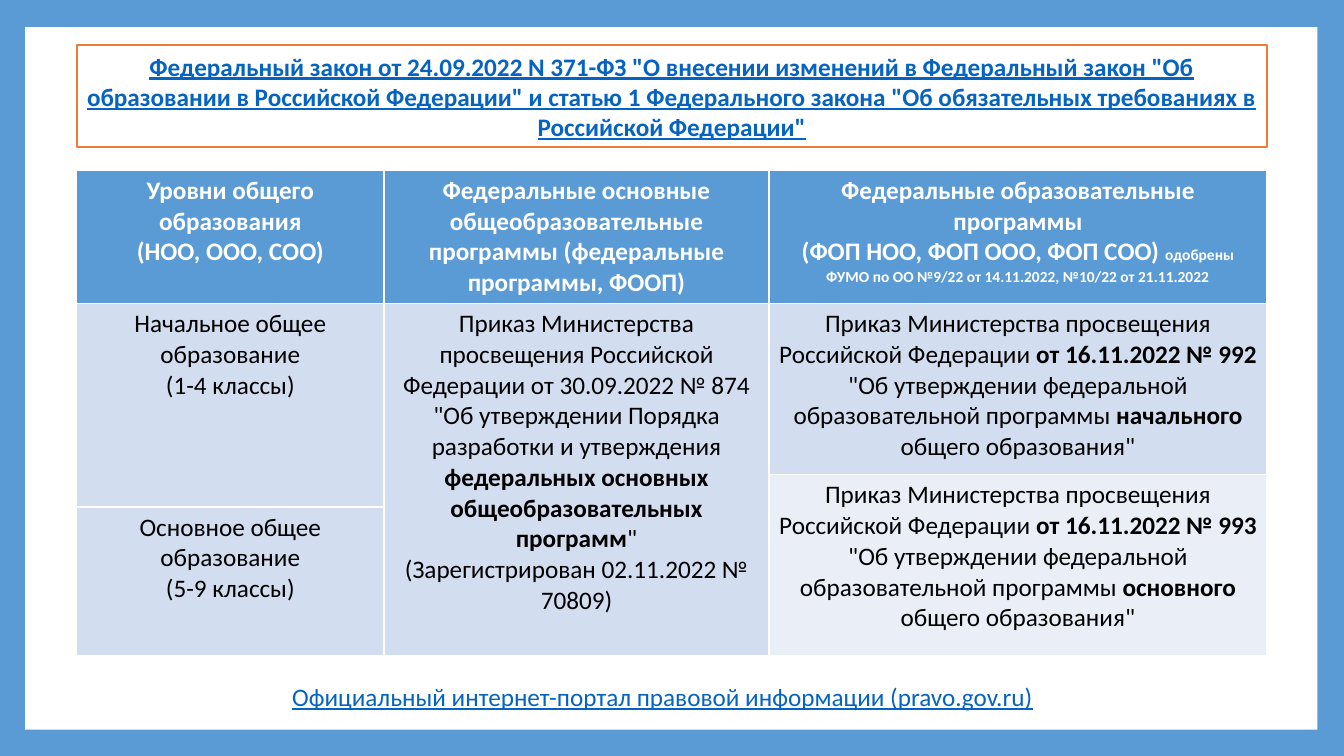
from pptx import Presentation
from pptx.dml.color import RGBColor
from pptx.enum import shapes, text
from pptx.util import Pt

HUES = {"blue": "5B9BD5", "white": "FFFFFF", "pale": "D2DEEF", "light": "EAEFF7",
        "link": "0563C1", "edge": "ED7D31", "black": "000000"}


def paint(fill, hue):
    fill.solid()
    fill.fore_color.rgb = RGBColor.from_string(HUES[hue])


def write(frame, paras, hue, align=text.PP_ALIGN.CENTER, line=False):
    """Fill a frame; each paragraph is a list of (words, bold, size) runs."""
    frame.word_wrap = True
    for i, runs in enumerate(paras):
        para = frame.paragraphs[0] if i == 0 else frame.add_paragraph()
        para.alignment = align
        for words, bold, size in runs:
            run = para.add_run()
            run.text = words
            font = run.font
            font.name, font.size, font.bold = "Calibri", Pt(size), bold
            font.underline = line
            font.color.rgb = RGBColor.from_string(HUES[hue])


deck = Presentation()
deck.slide_width, deck.slide_height = Pt(960), Pt(540)
slide = deck.slides.add_slide(deck.slide_layouts[5])
paint(slide.background.fill, "blue")

# White panel, sent behind the title
panel = slide.shapes.add_shape(shapes.MSO_SHAPE.RECTANGLE,
                               Pt(18), Pt(19.4), Pt(923), Pt(501.9))
panel.shadow.inherit = False
paint(panel.fill, "white")
panel.line.fill.background()
slide.shapes._spTree.insert(2, panel._element)

# Title
left, width = 54.7, 850.3
title = slide.shapes.title
title.left, title.top, title.width, title.height = Pt(left), Pt(32.4), Pt(width), Pt(72.7)
paint(title.fill, "white")
paint(title.line.fill, "edge")
title.line.width = Pt(1.5)
law = ('Федеральный закон от 24.09.2022 N 371-ФЗ "О внесении изменений в Федеральный '
       'закон "Об образовании в Российской Федерации" и статью 1 Федерального закона '
       '"Об обязательных требованиях в Российской Федерации"')
write(title.text_frame, [[(law, True, 18)]], "link", line=True)
title.text_frame.auto_size = text.MSO_AUTO_SIZE.NONE
title.text_frame.vertical_anchor = text.MSO_ANCHOR.MIDDLE

# Table
cols = [219.6, 275, 355.7]
rows = [87.1, 122.4, 23, 105.9]
table = slide.shapes.add_table(len(rows), len(cols), Pt(left), Pt(121.7),
                               Pt(width), Pt(sum(rows))).table
table.horz_banding = False
for col, wide in zip(table.columns, cols):
    col.width = Pt(wide)
for row, high in zip(table.rows, rows):
    row.height = Pt(high)

heads = [
    [[("Уровни общего образования", True, 18)], [("(НОО, ООО, СОО)", True, 18)]],
    [[("Федеральные основные общеобразовательные программы "
       "(федеральные программы, ФООП)", True, 18)]],
    [[("Федеральные образовательные программы", True, 18)],
     [("(ФОП НОО, ФОП ООО, ФОП СОО) ", True, 18),
      ("одобрены ФУМО по ОО №9/22 от 14.11.2022, №10/22 от 21.11.2022", True, 11)]],
]
for j, paras in enumerate(heads):
    cell = table.cell(0, j)
    paint(cell.fill, "blue")
    write(cell.text_frame, paras, "white")

# Body cells: first row, last row, column, fill, paragraphs
body = [
    (1, 2, 0, "pale", [[("Начальное общее образование", False, 18)],
                       [("(1-4 классы)", False, 18)]]),
    (3, 3, 0, "pale", [[("Основное общее образование", False, 18)],
                       [("(5-9 классы)", False, 18)]]),
    (1, 3, 1, "pale", [
        [("Приказ Министерства просвещения Российской Федерации от 30.09.2022 № 874 "
          '"Об утверждении Порядка разработки и утверждения ', False, 18),
         ("федеральных основных общеобразовательных программ", True, 18),
         ('"', False, 18)],
        [("(Зарегистрирован 02.11.2022 № 70809)", False, 18)]]),
]
for top, end, hue, code, level in [(1, 1, "pale", 992, "начального"),
                                   (2, 3, "light", 993, "основного")]:
    body.append((top, end, 2, hue, [[
        ("Приказ Министерства просвещения Российской Федерации ", False, 18),
        (f"от 16.11.2022 № {code} ", True, 18),
        ('"Об утверждении федеральной образовательной программы ', False, 18),
        (level, True, 18),
        (' общего образования"', False, 18)]]))
for top, end, j, hue, paras in body:
    cell = table.cell(top, j)
    if end > top:
        cell.merge(table.cell(end, j))
    for i in range(top, end + 1):
        paint(table.cell(i, j).fill, hue)
    write(cell.text_frame, paras, "black")

# Source line
note = slide.shapes.add_textbox(Pt(201.6), Pt(483.1), Pt(611.3), Pt(29))
write(note.text_frame,
      [[("Официальный интернет-портал правовой информации (pravo.gov.ru)", False, 18)]],
      "link", text.PP_ALIGN.LEFT, True)

deck.save("out.pptx")
